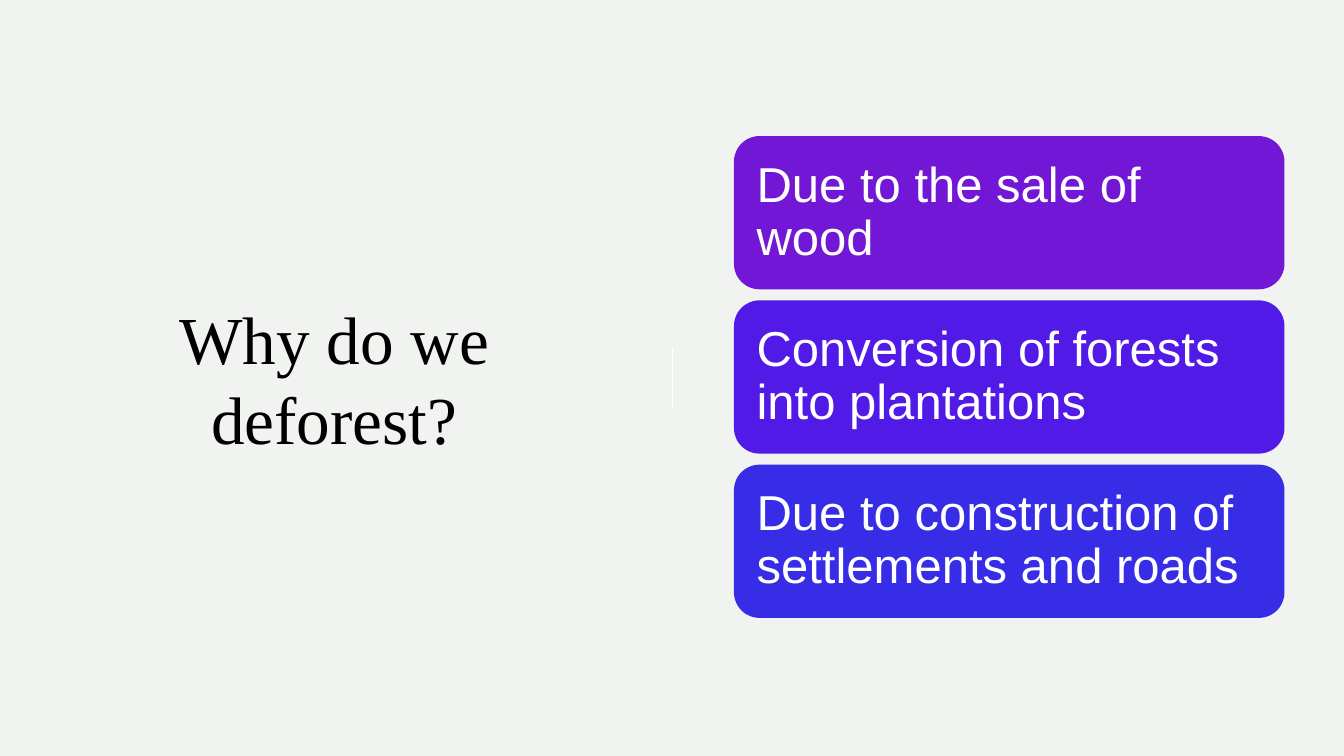
from dataclasses import dataclass

from lxml.etree import SubElement
from pptx import Presentation
from pptx.dml.color import RGBColor as RGB
from pptx.enum.shapes import MSO_CONNECTOR as Connector, MSO_SHAPE as Shape
from pptx.enum.text import MSO_ANCHOR as Anchor, PP_ALIGN as Align
from pptx.oxml.ns import qn
from pptx.util import Inches, Pt


@dataclass(frozen=True)
class Theme:
    background: str = "F1F3F0"
    title_color: str = "000000"
    light: str = "FFFFFF"
    reason_fills: tuple = ("7117D5", "511AE6", "382DE7")
    title_font: str = "Times New Roman"
    body_font: str = "Arial"
    title_size: int = 48
    reason_size: int = 35


class SlideBuilder:
    """Draws styled elements on one slide."""

    def __init__(self, slide, theme):
        self.slide = slide
        self.theme = theme
        background = slide.background.fill
        background.solid()
        background.fore_color.rgb = RGB.from_string(theme.background)

    def style(self, paragraph, name, size, color, align):
        paragraph.alignment = align
        font = paragraph.font
        font.name, font.size = name, Pt(size)
        font.color.rgb = RGB.from_string(color)

    def title(self, text, left, top, width, height):
        title = self.slide.shapes.title
        title.left, title.top = Inches(left), Inches(top)
        title.width, title.height = Inches(width), Inches(height)
        frame = title.text_frame
        frame.text = text
        frame.word_wrap = True
        frame.vertical_anchor = Anchor.MIDDLE
        self.style(frame.paragraphs[0], self.theme.title_font,
                   self.theme.title_size, self.theme.title_color, Align.CENTER)

    def divider(self, x, top, bottom):
        divider = self.slide.shapes.add_connector(
            Connector.STRAIGHT, Inches(x), Inches(top), Inches(x), Inches(bottom))
        divider.line.color.rgb = RGB.from_string(self.theme.light)
        divider.line.width = Pt(1)
        SubElement(divider.element.spPr, qn("a:effectLst"))

    def reason(self, text, fill, left, top, width, height):
        card = self.slide.shapes.add_shape(
            Shape.ROUNDED_RECTANGLE, Inches(left), Inches(top), Inches(width), Inches(height))
        card.shadow.inherit = False
        card.fill.solid()
        card.fill.fore_color.rgb = RGB.from_string(fill)
        card.line.fill.background()
        frame = card.text_frame
        frame.text = text
        frame.word_wrap = True
        frame.vertical_anchor = Anchor.MIDDLE
        frame.margin_left = frame.margin_right = Inches(0.15)
        frame.margin_top = frame.margin_bottom = Inches(0.15)
        paragraph = frame.paragraphs[0]
        paragraph.line_spacing = 0.9
        self.style(paragraph, self.theme.body_font,
                   self.theme.reason_size, self.theme.light, Align.LEFT)


def main():
    presentation = Presentation()
    presentation.slide_width, presentation.slide_height = Inches(13.33), Inches(7.5)
    theme = Theme()
    builder = SlideBuilder(
        presentation.slides.add_slide(presentation.slide_layouts[5]), theme)

    builder.title("Why do we deforest?", 1.18, 1.18, 4.27, 5.13)
    builder.divider(6.67, 3.45, 4.05)

    reasons = (
        "Due to the sale of wood",
        "Conversion of forests into plantations",
        "Due to construction of settlements and roads",
    )
    first_top, card_height, gap = 1.35, 1.52, 0.11
    for row, (reason, fill) in enumerate(zip(reasons, theme.reason_fills)):
        top = first_top + row * (card_height + gap)
        builder.reason(reason, fill, 7.28, top, 5.46, card_height)

    presentation.save("out.pptx")


if __name__ == "__main__":
    main()
